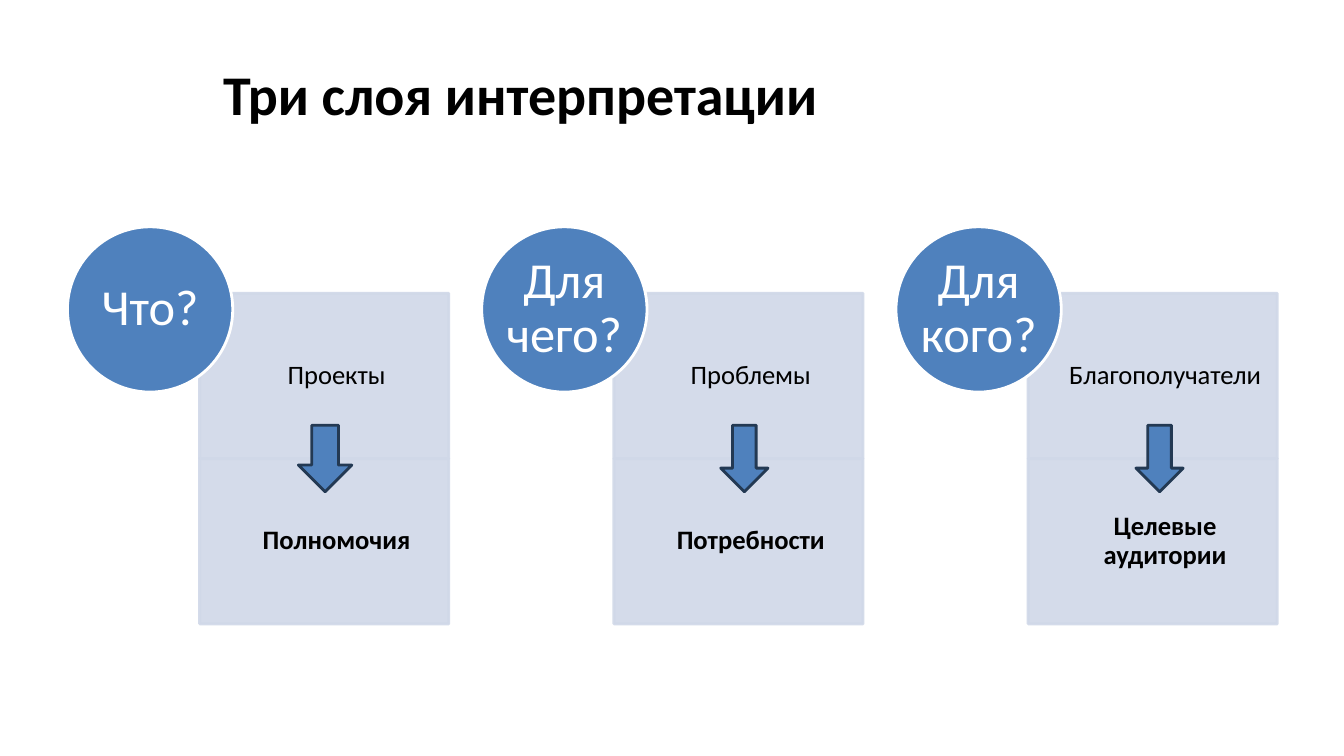
from lxml.etree import SubElement
from pptx import Presentation
from pptx.dml.color import RGBColor
from pptx.enum.shapes import MSO_SHAPE
from pptx.enum.text import MSO_ANCHOR, PP_ALIGN
from pptx.oxml.ns import qn
from pptx.util import Pt

TITLE = "Три слоя интерпретации"
# question, upper text, lower text, arrow left, arrow width
LAYERS = [
    ("Что?", "Проекты", "Полномочия", 213.1, 38.2),
    ("Для чего?", "Проблемы", "Потребности", 514.8, 33.8),
    ("Для кого?", "Благополучатели", "Целевые аудитории", 811.4, 33.8),
]

BLACK = RGBColor(0x00, 0x00, 0x00)
WHITE = RGBColor(0xFF, 0xFF, 0xFF)
BLUE = RGBColor(0x4F, 0x81, 0xBD)
PALE = RGBColor(0xD0, 0xD8, 0xE8)
NAVY = RGBColor(0x23, 0x39, 0x53)
FONT = "Calibri"

CIRCLE_LEFT, CIRCLE_TOP, SIDE = 48.2, 162, 118.1
PANEL_LEFT, PANEL_TOP, PANEL_WIDTH = 142.6, 209.5, 178
STEP = 295.9
ARROW_TOP, ARROW_HEIGHT = 303.8, 47.5


def add_figure(page, kind, left, top, width, height, fill, line):
    shape = page.shapes.add_shape(kind, Pt(left), Pt(top), Pt(width), Pt(height))
    shape.shadow.inherit = False
    shape.fill.solid()
    shape.fill.fore_color.rgb = fill
    shape.line.color.rgb = line
    shape.line.width = Pt(2)
    return shape


def write(shape, text, size, color, bold=False, insets=(0, 0, 0, 0)):
    frame = shape.text_frame
    frame.word_wrap = True
    frame.vertical_anchor = MSO_ANCHOR.MIDDLE
    (frame.margin_left, frame.margin_top,
     frame.margin_right, frame.margin_bottom) = [Pt(inset) for inset in insets]
    para = frame.paragraphs[0]
    para.text = text
    para.alignment = PP_ALIGN.CENTER
    para.line_spacing = 0.9
    para.font.name = FONT
    para.font.size = Pt(size)
    para.font.bold = bold
    para.font.color.rgb = color


def make_translucent(shape, percent):
    for color in shape.element.spPr.iter(qn("a:srgbClr")):
        SubElement(color, qn("a:alpha"), val=str(percent * 1000))


deck = Presentation()
deck.slide_width, deck.slide_height = Pt(960), Pt(540)
page = deck.slides.add_slide(deck.slide_layouts[5])

# Title
title = page.shapes.title
title.left, title.top, title.width, title.height = Pt(48), Pt(21.6), Pt(647.3), Pt(90)
title.text_frame.vertical_anchor = MSO_ANCHOR.MIDDLE
para = title.text_frame.paragraphs[0]
para.text = TITLE
para.alignment = PP_ALIGN.CENTER
para.font.name = FONT
para.font.size = Pt(40)
para.font.bold = True
para.font.color.rgb = BLACK

# Two stacked panels and a question circle for each layer
for column, (question, upper, lower, _, _) in enumerate(LAYERS):
    shift = column * STEP
    for row, text in enumerate((upper, lower)):
        panel = add_figure(page, MSO_SHAPE.RECTANGLE, PANEL_LEFT + shift,
                           PANEL_TOP + row * SIDE, PANEL_WIDTH, SIDE, PALE, PALE)
        make_translucent(panel, 90)
        write(panel, text, 19, BLACK, bold=row == 1, insets=(28.4, 10.8, 10.8, 10.8))
    circle = add_figure(page, MSO_SHAPE.OVAL, CIRCLE_LEFT + shift, CIRCLE_TOP,
                        SIDE, SIDE, BLUE, WHITE)
    write(circle, question, 36, WHITE)

# Arrows from the upper to the lower panel
for *_, left, width in LAYERS:
    add_figure(page, MSO_SHAPE.DOWN_ARROW, left, ARROW_TOP, width, ARROW_HEIGHT, BLUE, NAVY)

deck.save("out.pptx")
